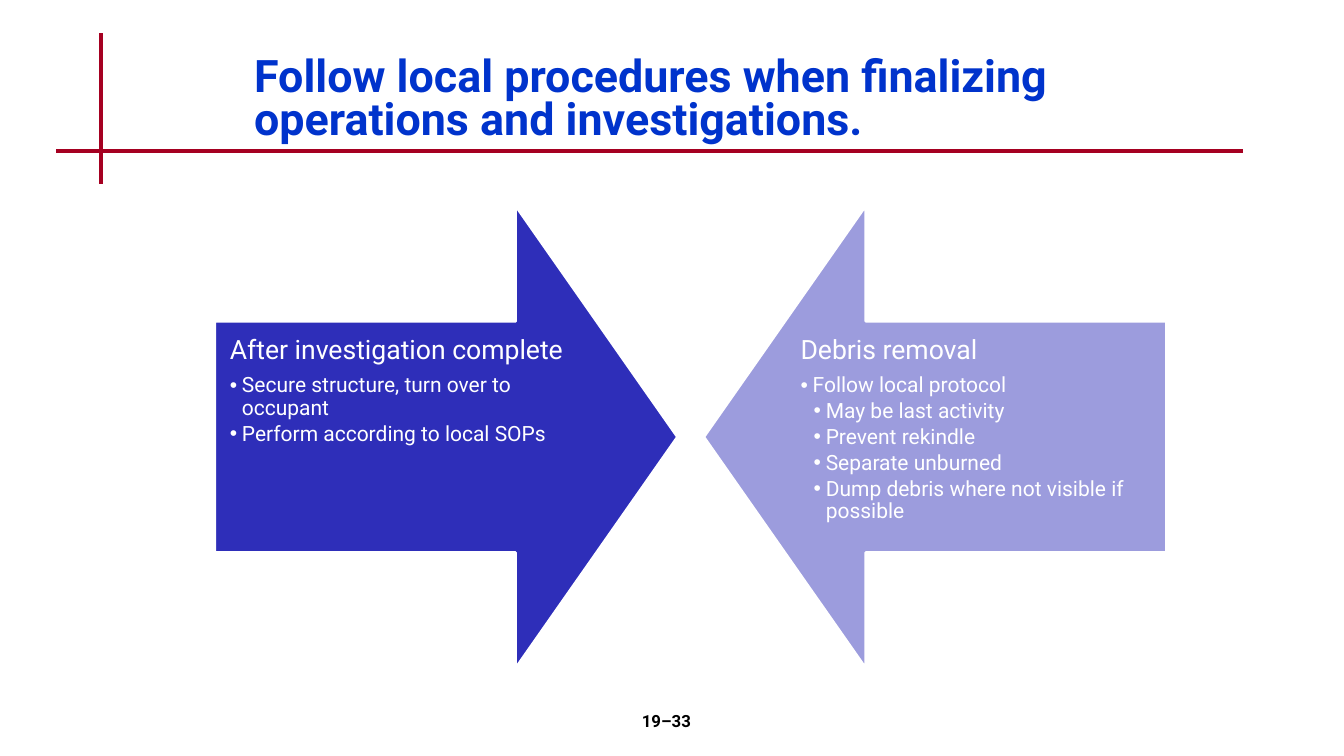
from lxml.etree import SubElement
from pptx import Presentation
from pptx.dml.color import RGBColor
from pptx.enum.shapes import MSO_CONNECTOR, MSO_SHAPE
from pptx.enum.text import MSO_ANCHOR, MSO_AUTO_SIZE, PP_ALIGN
from pptx.oxml.ns import qn
from pptx.util import Pt

PX = 9144
FONT = "Roboto"
RED = RGBColor(0xA5, 0x00, 0x21)
BLUE = RGBColor(0x00, 0x33, 0xCC)
INDIGO = RGBColor(0x2E, 0x2E, 0xB9)
LILAC = RGBColor(0x9C, 0x9C, 0xDD)
WHITE = RGBColor(0xFF, 0xFF, 0xFF)
BLACK = RGBColor(0x00, 0x00, 0x00)

TITLE = "Follow local procedures when finalizing operations and investigations."
PAGE = "19–33"
RULES = [(100, 33, 100, 183), (56, 150, 1233, 150)]
ARROWS = [
    {"left": 213, "text_left": 213, "rotation": 270, "fill": INDIGO, "lines": [
        (0, "After investigation complete"),
        (1, "Secure structure, turn over to occupant"),
        (1, "Perform according to local SOPs"),
    ]},
    {"left": 698, "text_left": 779, "rotation": 90, "fill": LILAC, "lines": [
        (0, "Debris removal"),
        (1, "Follow local protocol"),
        (2, "May be last activity"),
        (2, "Prevent rekindle"),
        (2, "Separate unburned"),
        (2, "Dump debris where not visible if possible"),
    ]},
]
ARROW_TOP, ARROW_SIZE = 204, 459
TEXT_TOP, TEXT_W, TEXT_H, INSET = 319, 379, 230, 15
INDENTS = [0, 12, 25]
HANG = 12


def px(*values):
    return [v * PX for v in values]


def place(shape, *box):
    shape.left, shape.top, shape.width, shape.height = px(*box)


def style(p, size, color, bold=False):
    for r in p.runs:
        r.font.name = FONT
        r.font.size = Pt(size)
        r.font.bold = bold
        r.font.color.rgb = color


def add_rule(s, ends):
    line = s.shapes.add_connector(MSO_CONNECTOR.STRAIGHT, *px(*ends))
    line.line.color.rgb = RED
    line.line.width = Pt(3)
    SubElement(line.element.spPr, qn("a:effectLst"))


def add_arrow(s, arrow):
    sp = s.shapes.add_shape(
        MSO_SHAPE.DOWN_ARROW, *px(arrow["left"], ARROW_TOP, ARROW_SIZE, ARROW_SIZE))
    sp.adjustments[0], sp.adjustments[1] = 0.5, 0.35
    sp.rotation = arrow["rotation"]
    sp.shadow.inherit = False
    sp.fill.solid()
    sp.fill.fore_color.rgb = arrow["fill"]
    sp.line.color.rgb = WHITE
    sp.line.width = Pt(2)


def fill_list(body, arrow):
    place(body, arrow["text_left"], TEXT_TOP, TEXT_W, TEXT_H)
    body.element.getparent().append(body.element)
    tf = body.text_frame
    tf.word_wrap = True
    tf.auto_size = MSO_AUTO_SIZE.NONE
    tf.vertical_anchor = MSO_ANCHOR.TOP
    tf.margin_left = tf.margin_top = tf.margin_right = tf.margin_bottom = INSET * PX
    tf.text = "\n".join(text for _, text in arrow["lines"])
    for p, (level, _) in zip(tf.paragraphs, arrow["lines"]):
        p.level = level
        p.line_spacing = 0.9
        p.space_before = Pt(0)
        p.space_after = Pt(2.25 if level else 6.65)
        pPr = p._p.get_or_add_pPr()
        pPr.set("marL", str(INDENTS[level] * PX))
        pPr.set("indent", str(-HANG * PX if level else 0))
        if level:
            SubElement(pPr, qn("a:buChar"), char="•")
        else:
            SubElement(pPr, qn("a:buNone"))
        style(p, 15 if level else 19, WHITE)


def main():
    prs = Presentation()
    prs.slide_width, prs.slide_height = px(1333, 750)
    s = prs.slides.add_slide(prs.slide_layouts.get_by_name("Two Content"))
    title, *bodies = s.placeholders

    for ends in RULES:
        add_rule(s, ends)

    place(title, 242, 50, 925, 100)
    tf = title.text_frame
    tf.text = TITLE
    tf.auto_size = MSO_AUTO_SIZE.NONE
    tf.vertical_anchor = MSO_ANCHOR.MIDDLE
    p = tf.paragraphs[0]
    p.alignment = PP_ALIGN.LEFT
    p.line_spacing = 0.8
    style(p, 32, BLUE, True)

    for arrow, body in zip(ARROWS, bodies):
        add_arrow(s, arrow)
        fill_list(body, arrow)

    tf = s.shapes.add_textbox(*px(522, 700, 278, 50)).text_frame
    tf.word_wrap = True
    tf.text = PAGE
    p = tf.paragraphs[0]
    p.alignment = PP_ALIGN.CENTER
    style(p, 12, BLACK, True)

    prs.save("out.pptx")


if __name__ == "__main__":
    main()
